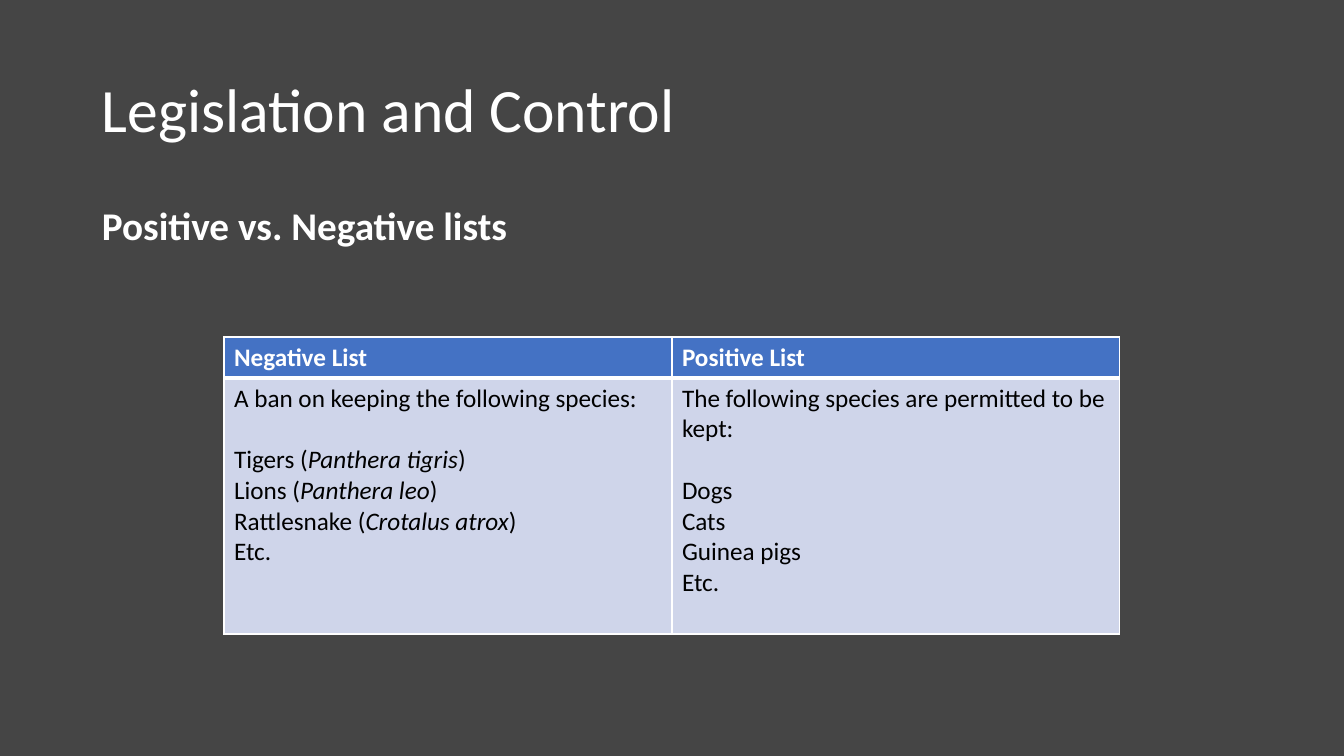
from lxml.etree import SubElement
from pptx import Presentation
from pptx.dml.color import RGBColor
from pptx.enum.text import MSO_ANCHOR as Anchor
from pptx.oxml.ns import qn
from pptx.util import Pt

PX = 914400 / 100.8
COLORS = {
    "background": "454545",
    "light": "FFFFFF",
    "dark": "000000",
    "header": "4472C4",
    "body": "CFD5EA",
}
TITLE_FONT = {"name": "Calibri", "size": Pt(44), "bold": False}
SUBTITLE_FONT = {"name": "Calibri", "size": Pt(28), "bold": True}
HEADER_FONT = {"name": "Calibri", "size": Pt(18), "bold": True}
BODY_FONT = {"name": "Calibri", "size": Pt(18), "bold": False}

HEADINGS = ["Negative List", "Positive List"]
LISTS = [
    [
        ["A ban on keeping the following species:"],
        ["Tigers (", "Panthera tigris", ")"],
        ["Lions (", "Panthera leo", ")"],
        ["Rattlesnake (", "Crotalus atrox", ")"],
        ["Etc."],
    ],
    [
        ["The following species are permitted to be kept:"],
        ["Dogs"],
        ["Cats"],
        ["Guinea pigs"],
        ["Etc."],
    ],
]


def px(length):
    """Turn pixels into EMU."""
    return round(length * PX)


def rgb(color):
    """Look up a named colour."""
    return RGBColor.from_string(COLORS[color])


def apply_format(target, values):
    """Set each attribute in values on target."""
    for attribute, value in values.items():
        setattr(target, attribute, value)


def add_words(paragraph, words, font, color, italic=False):
    """Append one formatted run to a paragraph."""
    run = paragraph.add_run()
    run.text = words
    apply_format(run.font, {**font, "italic": italic})
    run.font.color.rgb = rgb(color)


def add_heading(slide, words, box, font, frame_format, paragraph_format):
    """Add a one-line heading in a text box."""
    frame = slide.shapes.add_textbox(*map(px, box)).text_frame
    apply_format(frame, {"word_wrap": True, **frame_format})
    paragraph = frame.paragraphs[0]
    apply_format(paragraph, paragraph_format)
    add_words(paragraph, words, font, "light")


def add_borders(cell, widths):
    """Draw white cell borders with widths in points by side."""
    properties = cell._tc.get_or_add_tcPr()
    for position, (side, width) in enumerate(widths.items()):
        line = SubElement(properties, qn(f"a:ln{side}"), w=str(Pt(width)))
        fill = SubElement(line, qn("a:solidFill"))
        SubElement(fill, qn("a:srgbClr"), val=COLORS["light"])
        properties.insert(position, line)


def fill_cell(cell, lines, fill, font, color, widths):
    """Write a cell whose second line starts after a one-line gap."""
    cell.fill.solid()
    cell.fill.fore_color.rgb = rgb(fill)
    add_borders(cell, widths)
    frame = cell.text_frame
    for number, parts in enumerate(lines):
        paragraph = frame.add_paragraph() if number else frame.paragraphs[0]
        if number == 1:
            paragraph.space_before = Pt(22)
        for place, words in enumerate(parts):
            add_words(paragraph, words, font, color, italic=place == 1)


def add_species_table(slide):
    """Add the table that compares the two kinds of list."""
    table = slide.shapes.add_table(2, 2, *map(px, (224, 337, 896, 297))).table
    table.horz_banding = False
    for row, height in zip(table.rows, (41, 256)):
        row.height = px(height)
    for column, (heading, species) in enumerate(zip(HEADINGS, LISTS)):
        table.columns[column].width = px(448)
        fill_cell(table.cell(0, column), [[heading]], "header", HEADER_FONT,
                  "light", {"L": 1, "R": 1, "T": 1, "B": 3})
        fill_cell(table.cell(1, column), species, "body", BODY_FONT,
                  "dark", {"L": 1, "R": 1, "T": 3, "B": 1})


def main():
    """Build and save the slide."""
    deck = Presentation()
    apply_format(deck, {"slide_width": px(1344), "slide_height": px(756)})
    slide = deck.slides.add_slide(deck.slide_layouts[6])
    slide.background.fill.solid()
    slide.background.fill.fore_color.rgb = rgb("background")
    add_heading(slide, "Legislation and Control", (92, 40, 1159, 146), TITLE_FONT,
                {"vertical_anchor": Anchor.MIDDLE}, {"line_spacing": 0.9})
    add_heading(slide, "Positive vs. Negative lists", (92, 202, 1159, 480),
                SUBTITLE_FONT, {"vertical_anchor": Anchor.TOP},
                {"line_spacing": 0.9, "space_before": Pt(10)})
    add_species_table(slide)
    deck.save("out.pptx")


if __name__ == "__main__":
    main()
